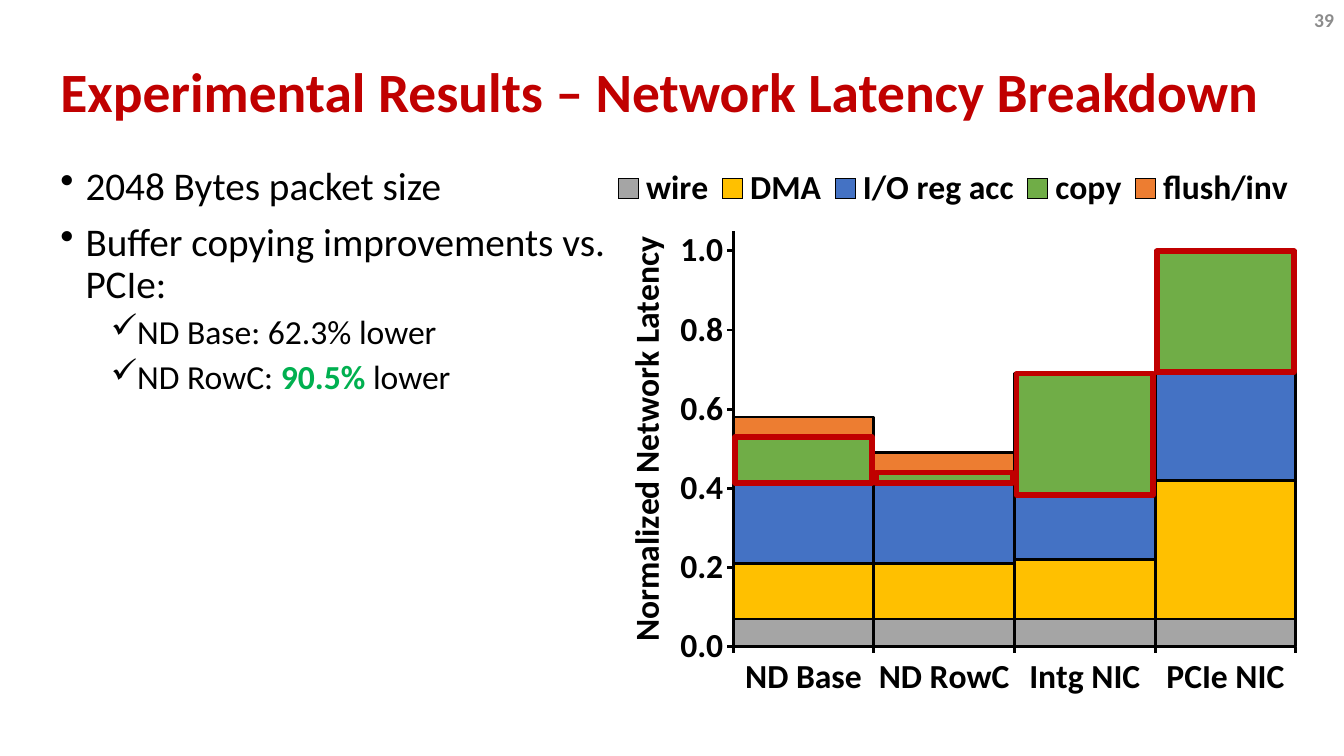
from dataclasses import dataclass
from pptx import Presentation
from pptx.chart.data import CategoryChartData as Data
from pptx.dml.color import RGBColor as RGB
from pptx.enum.chart import XL_CHART_TYPE as Kind, XL_LEGEND_POSITION as Side, XL_TICK_MARK as Tick
from pptx.enum.shapes import MSO_SHAPE as Shape
from pptx.enum.text import MSO_ANCHOR as Anchor, PP_ALIGN as Align
from pptx.oxml import parse_xml
from pptx.oxml.ns import nsdecls, qn
from pptx.util import Inches, Pt

FONT, RED, BLACK, GREEN = "Calibri", "C00000", "000000", "00B050"
WIDE, HIGH = Inches(13.33), Inches(7.5)


@dataclass
class Box:
    """Left, top, width and height in percent of the slide."""
    x: float
    y: float
    w: float
    h: float

    def emu(self) -> tuple[int, ...]:
        sides = ((self.x, WIDE), (self.y, HIGH), (self.w, WIDE), (self.h, HIGH))
        return tuple(int(part * full / 100) for part, full in sides)

    def inner(self, part: "Box") -> "Box":
        return Box(self.x + part.x * self.w / 100, self.y + part.y * self.h / 100,
                   part.w * self.w / 100, part.h * self.h / 100)


@dataclass
class Run:
    text: str
    color: str = BLACK
    bold: bool = False


@dataclass
class Item:
    runs: list[Run]
    level: int = 0


@dataclass
class Series:
    name: str
    color: str
    vals: list[float]


TITLE = Box(3.75, 5.33, 93.77, 13.33)
BODY = Box(3.75, 21.33, 42.16, 73.33)
PAGE = Box(77.5, 0, 22.5, 5.33)
CHART = Box(44.34, 21.33, 53.19, 73.33)
PLOT = Box(19.2, 12.6, 78.7, 75)
LEGEND = Box(1.2, 0.5, 97.6, 9)
LABEL = Box(3, 12.5, 0, 0)

ITEMS = [
    Item([Run("2048 Bytes packet size")]),
    Item([Run("Buffer copying improvements vs. PCIe:")]),
    Item([Run("ND Base: 62.3% lower")], 1),
    Item([Run("ND RowC: "), Run("90.5% ", GREEN, True), Run("lower")], 1),
]
CATS = ["ND Base", "ND RowC", "Intg NIC", "PCIe NIC"]
STACK = [
    Series("wire", "A5A5A5", [0.07, 0.07, 0.07, 0.07]),
    Series("DMA", "FFC000", [0.14, 0.14, 0.15, 0.35]),
    Series("I/O reg acc", "4472C4", [0.2, 0.2, 0.16, 0.27]),
    Series("copy", "70AD47", [0.12, 0.03, 0.31, 0.31]),
    Series("flush/inv", "ED7D31", [0.05, 0.05, 0, 0]),
]
COPY = 3
PEAK = 1.05


def tint(target, color: str) -> None:
    """Give a font, or a solid fill, its colour."""
    spot = target.color if hasattr(target, "color") else target.fore_color
    spot.rgb = RGB.from_string(color)


def style(font, size: float, color: str = BLACK, bold: bool = True) -> None:
    font.name, font.size, font.bold = FONT, Pt(size), bold
    tint(font, color)


def stroke(line, color: str, width: float) -> None:
    line.fill.solid()
    tint(line, color)
    line.width = Pt(width)


def frame(slide, box: Box):
    text = slide.shapes.add_textbox(*box.emu()).text_frame
    text.word_wrap = True
    return text


def label(slide, box: Box, text: str, size: float, color: str, align: Align) -> None:
    body = frame(slide, box)
    body.vertical_anchor = Anchor.MIDDLE
    body.text = text
    para = body.paragraphs[0]
    para.alignment = align
    style(para.runs[0].font, size, color)


def bullets(slide, box: Box, items: list[Item]) -> None:
    body = frame(slide, box)
    for i, item in enumerate(items):
        para = body.add_paragraph() if i else body.paragraphs[0]
        para.level = item.level
        para.line_spacing = 0.9
        para.space_before = Pt(6 if item.level else 10)
        props = para._p.get_or_add_pPr()
        props.set("marL", str(Inches(0.25 + 0.5 * item.level)))
        props.set("indent", str(-Inches(0.25)))
        mark = "✓" if item.level else "•"
        props.append(parse_xml(f'<a:buChar {nsdecls("a")} char="{mark}"/>'))
        for part in item.runs:
            run = para.add_run()
            run.text = part.text
            style(run.font, 24 if item.level else 28, part.color, part.bold)


def place(host, index: int, box: Box, inner: bool = False) -> None:
    """Fix the layout of a chart part, in percent of the chart."""
    for old in host.findall(qn("c:layout")):
        host.remove(old)
    tags = '<c:layoutTarget val="inner"/>' if inner else ""
    tags += '<c:xMode val="edge"/><c:yMode val="edge"/>'
    for key in "xywh":
        if share := getattr(box, key):
            tags += f'<c:{key} val="{share / 100:.3f}"/>'
    host.insert(index, parse_xml(
        f'<c:layout {nsdecls("c")}><c:manualLayout>{tags}</c:manualLayout></c:layout>'))


def stack(slide) -> None:
    data = Data()
    data.categories = CATS
    for row in STACK:
        data.add_series(row.name, row.vals)
    chart = slide.shapes.add_chart(Kind.COLUMN_STACKED, *CHART.emu(), data).chart
    style(chart.font, 24)
    chart.has_title = False
    plot = chart.plots[0]
    plot.gap_width, plot.overlap, plot.vary_by_categories = 0, 100, False
    for bar, row in zip(plot.series, STACK):
        bar.format.fill.solid()
        tint(bar.format.fill, row.color)
        stroke(bar.format.line, BLACK, 2)

    # Axes
    axis = chart.value_axis
    for each in (chart.category_axis, axis):
        each.has_major_gridlines = False
        each.major_tick_mark = Tick.OUTSIDE
        style(each.tick_labels.font, 24)
        stroke(each.format.line, BLACK, 2)
    axis.minimum_scale, axis.maximum_scale, axis.major_unit = 0, PEAK, 0.2
    axis.tick_labels.number_format = "#,##0.0"
    axis.tick_labels.number_format_is_linked = False
    head = axis.axis_title
    head.text_frame.text = "Normalized Network Latency"
    style(head.text_frame.paragraphs[0].runs[0].font, 24)

    # Legend and layout
    chart.has_legend = True
    chart.legend.position = Side.TOP
    chart.legend.include_in_layout = False
    style(chart.legend.font, 24)
    place(head._element, 1, LABEL)
    place(chart.legend._element, 1, LEGEND)
    place(chart._chartSpace.chart.plotArea, 0, PLOT, True)


def marks(slide) -> None:
    area = CHART.inner(PLOT)
    step, unit = area.w / len(CATS), area.h / PEAK
    for i, val in enumerate(STACK[COPY].vals):
        top = sum(row.vals[i] for row in STACK[:COPY + 1])
        box = Box(area.x + i * step + 0.15, area.y + (PEAK - top) * unit,
                  step - 0.3, val * unit - 0.2)
        rect = slide.shapes.add_shape(Shape.RECTANGLE, *box.emu())
        rect.shadow.inherit = False
        rect.fill.background()
        stroke(rect.line, RED, 4)


def main() -> None:
    deck = Presentation()
    deck.slide_width, deck.slide_height = WIDE, HIGH
    slide = deck.slides.add_slide(deck.slide_layouts[6])
    label(slide, TITLE, "Experimental Results – Network Latency Breakdown", 39.6, RED, Align.LEFT)
    bullets(slide, BODY, ITEMS)
    label(slide, PAGE, "39", 14, "8C8C8C", Align.RIGHT)
    stack(slide)
    marks(slide)
    deck.save("out.pptx")


if __name__ == "__main__":
    main()
